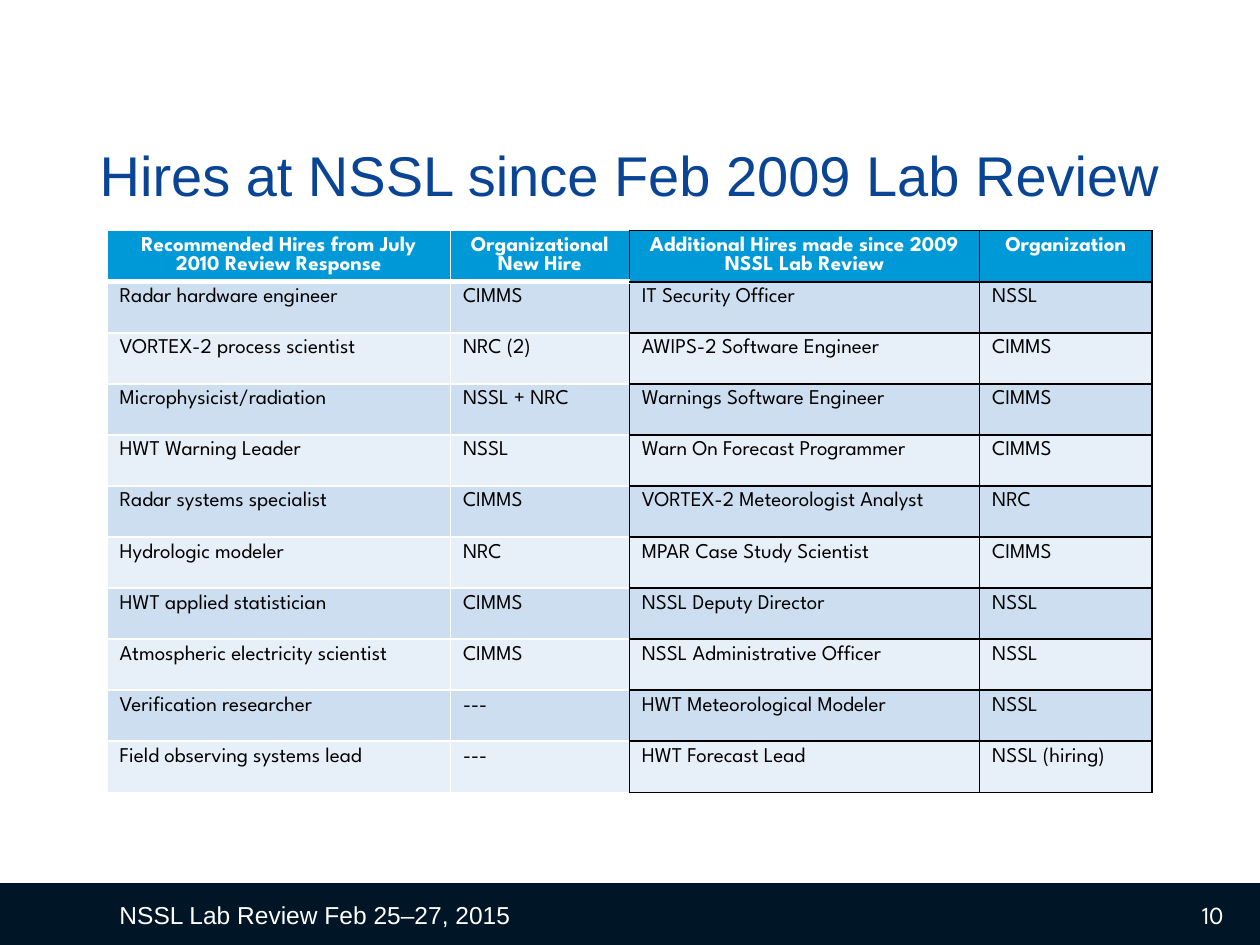
"""Build the slide listing hires at NSSL since the 2009 lab review."""
import dataclasses
import typing

import lxml.etree
import pptx
import pptx.dml.color
import pptx.enum.shapes
import pptx.enum.text
import pptx.oxml.ns
import pptx.util

RGB = pptx.dml.color.RGBColor
ALIGN = pptx.enum.text.PP_ALIGN
ANCHOR = pptx.enum.text.MSO_ANCHOR
NAVY = RGB(0x00, 0x15, 0x26)
ROYAL = RGB(0x0A, 0x45, 0x95)
AZURE = RGB(0x00, 0x99, 0xD8)
PALE = RGB(0xCC, 0xDE, 0xF0)
MIST = RGB(0xE7, 0xEF, 0xF8)
WHITE = RGB(0xFF, 0xFF, 0xFF)
BLACK = RGB(0x00, 0x00, 0x00)

SANS = "Arial"
GEO = "League Spartan"
WIDE, HIGH = pptx.util.Inches(10), pptx.util.Inches(7.5)
COLS, ROWS = 100, 75
WIDTHS = [27.25, 14.2, 27.8, 13.7]
HEIGHT = 44.6

HIRES = [
    ("Recommended Hires from July 2010 Review Response", "Organizational New Hire",
     "Additional Hires made since 2009 NSSL Lab Review", "Organization"),
    ("Radar hardware engineer", "CIMMS", "IT Security Officer", "NSSL"),
    ("VORTEX-2 process scientist", "NRC (2)", "AWIPS-2 Software Engineer", "CIMMS"),
    ("Microphysicist/radiation", "NSSL + NRC", "Warnings Software Engineer", "CIMMS"),
    ("HWT Warning Leader", "NSSL", "Warn On Forecast Programmer", "CIMMS"),
    ("Radar systems specialist", "CIMMS", "VORTEX-2 Meteorologist Analyst", "NRC"),
    ("Hydrologic modeler", "NRC", "MPAR Case Study Scientist", "CIMMS"),
    ("HWT applied statistician", "CIMMS", "NSSL Deputy Director", "NSSL"),
    ("Atmospheric electricity scientist", "CIMMS", "NSSL Administrative Officer", "NSSL"),
    ("Verification researcher", "---", "HWT Meteorological Modeler", "NSSL"),
    ("Field observing systems lead", "---", "HWT Forecast Lead", "NSSL (hiring)"),
]


@dataclasses.dataclass(frozen=True)
class Box:
    """A place on the slide, in columns and rows of its grid."""
    left: float
    top: float
    width: float
    height: float

    def place(self) -> dict[str, int]:
        """Return the place as lengths by name."""
        return {
            "left": across(self.left), "top": down(self.top),
            "width": across(self.width), "height": down(self.height),
        }


@dataclasses.dataclass(frozen=True)
class Style:
    """The look of a line of text."""
    size: int
    name: str
    color: RGB
    align: ALIGN = ALIGN.LEFT
    bold: bool = False


@dataclasses.dataclass(frozen=True)
class Note:
    """A line of text in the footer."""
    text: str
    box: Box
    style: Style


NOTES = [
    Note("NSSL Lab Review Feb 25–27, 2015", Box(8.5, 70.6, 45.7, 4), Style(14, SANS, WHITE)),
    Note("10", Box(74.8, 70.6, 23.3, 4), Style(14, GEO, WHITE, ALIGN.RIGHT)),
]
HEAD = Style(12, GEO, WHITE, ALIGN.CENTER, True)
BODY = Style(12, GEO, BLACK)


def across(cols: float) -> int:
    """Turn grid columns into a length."""
    return round(WIDE * cols / COLS)


def down(rows: float) -> int:
    """Turn grid rows into a length."""
    return round(HIGH * rows / ROWS)


def apply(item: typing.Any, values: dict[str, typing.Any]) -> None:
    """Set attributes of an item from a dict."""
    for key, value in values.items():
        setattr(item, key, value)


def write(frame: typing.Any, text: str, style: Style) -> None:
    """Put one styled paragraph in a text frame."""
    frame.text = text
    line = frame.paragraphs[0]
    line.alignment = style.align
    run = line.runs[0].font
    apply(run, {"size": pptx.util.Pt(style.size), "name": style.name, "bold": style.bold})
    run.color.rgb = style.color


def edge(cell: typing.Any, side: str, color: RGB, points: int) -> None:
    """Draw one border of a table cell."""
    props = cell._tc.get_or_add_tcPr()
    line = lxml.etree.SubElement(props, pptx.oxml.ns.qn(f"a:ln{side}"))
    line.set("w", str(pptx.util.Pt(points)))
    fill = lxml.etree.SubElement(line, pptx.oxml.ns.qn("a:solidFill"))
    lxml.etree.SubElement(fill, pptx.oxml.ns.qn("a:srgbClr")).set("val", str(color))


def draw_cell(cell: typing.Any, text: str, row: int, col: int) -> None:
    """Write, border and fill one cell of the hires table."""
    head = row == 0
    write(cell.text_frame, text, HEAD if head else BODY)
    for side in "LRTB":
        dark = col > 1 or (col == 1 and side == "R")
        thick = head and col < 2 and side == "B"
        edge(cell, side, BLACK if dark else WHITE, 3 if thick else 1)
    cell.fill.solid()
    cell.fill.fore_color.rgb = AZURE if head else PALE if row % 2 else MIST


def draw_hires(slide: typing.Any) -> None:
    """Draw the table of hires."""
    box = Box(8.5, 18.3, sum(WIDTHS), HEIGHT)
    table = slide.shapes.add_table(len(HIRES), len(WIDTHS), **box.place()).table
    for col, width in zip(table.columns, WIDTHS):
        col.width = across(width)
    for row, texts in enumerate(HIRES):
        table.rows[row].height = down(HEIGHT / len(HIRES))
        for col, text in enumerate(texts):
            draw_cell(table.cell(row, col), text, row, col)


def draw_bar(slide: typing.Any) -> None:
    """Draw the footer bar."""
    bar = slide.shapes.add_shape(
        pptx.enum.shapes.MSO_SHAPE.RECTANGLE, **Box(0, 70.1, COLS, 4.9).place())
    bar.shadow.inherit = False
    bar.fill.solid()
    bar.fill.fore_color.rgb = NAVY
    bar.line.fill.background()


def draw_title(slide: typing.Any) -> None:
    """Place and format the title."""
    title = slide.shapes.title
    apply(title, Box(1.9, 9.3, 96.2, 7.7).place())
    write(title.text_frame, "Hires at NSSL since Feb 2009 Lab Review",
          Style(32, SANS, ROYAL, ALIGN.CENTER))
    apply(title.text_frame, {
        "vertical_anchor": ANCHOR.BOTTOM, "word_wrap": True,
        "auto_size": pptx.enum.text.MSO_AUTO_SIZE.NONE,
    })


def draw_note(slide: typing.Any, note: Note) -> None:
    """Draw one line of the footer."""
    frame = slide.shapes.add_textbox(**note.box.place()).text_frame
    apply(frame, {"word_wrap": True, "vertical_anchor": ANCHOR.MIDDLE})
    write(frame, note.text, note.style)


def main() -> None:
    """Build and save the deck."""
    deck = pptx.Presentation()
    apply(deck, {"slide_width": WIDE, "slide_height": HIGH})
    slide = deck.slides.add_slide(deck.slide_layouts[5])
    draw_bar(slide)
    draw_title(slide)
    draw_hires(slide)
    for note in NOTES:
        draw_note(slide, note)
    deck.save("out.pptx")


if __name__ == "__main__":
    main()
